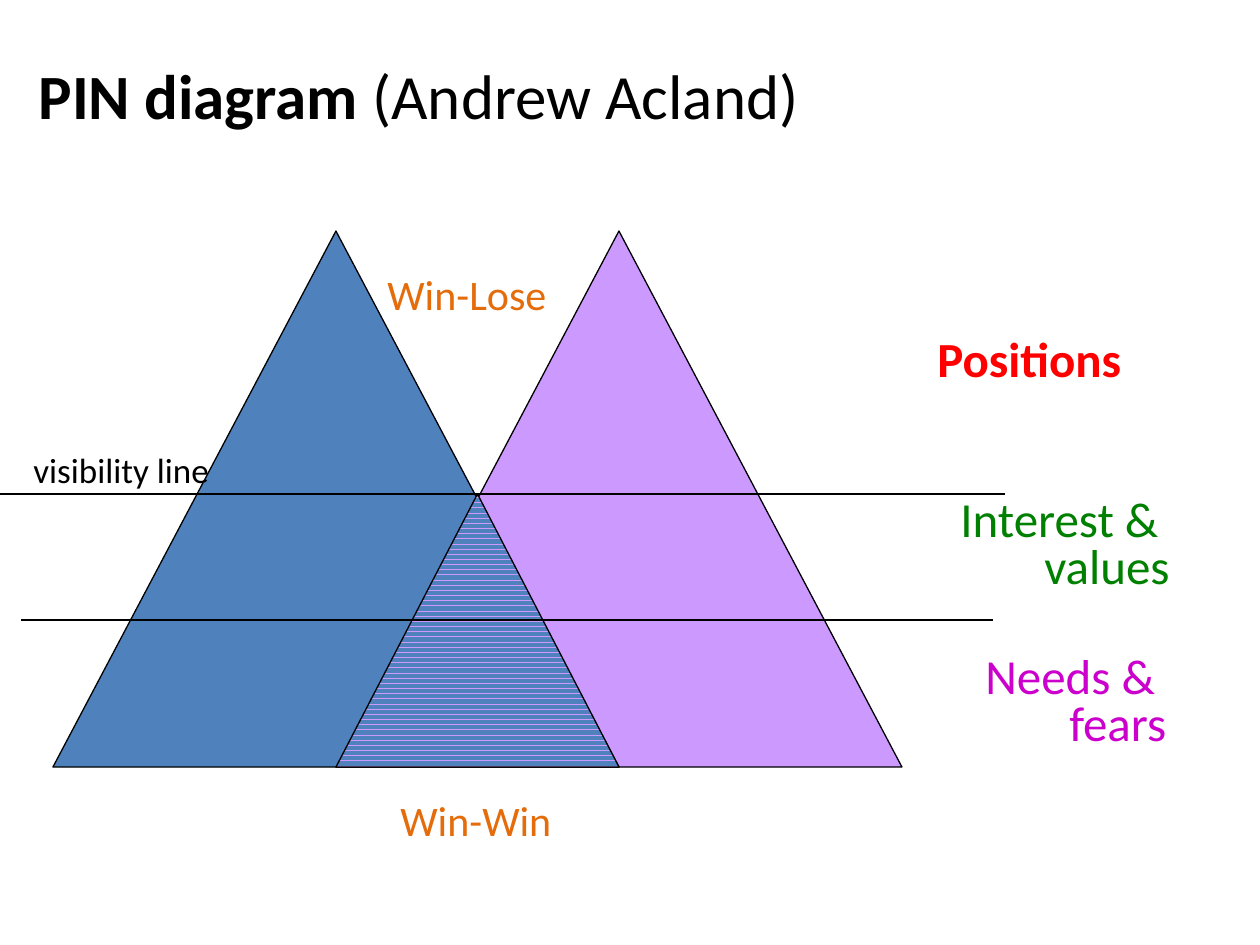
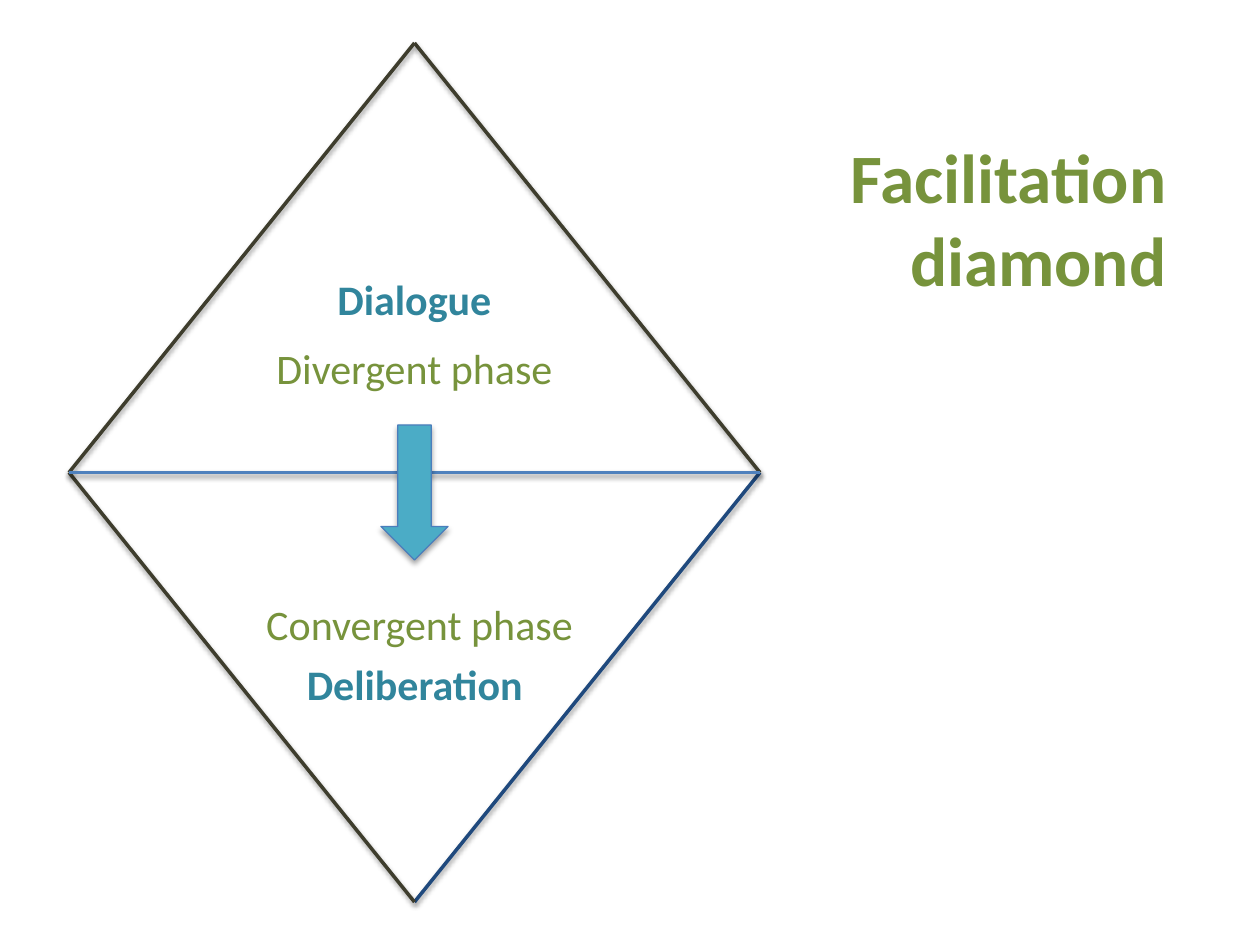
from collections import namedtuple

from lxml.etree import SubElement
from pptx import Presentation
from pptx.dml.color import RGBColor
from pptx.enum.dml import MSO_PATTERN
from pptx.enum.shapes import MSO_CONNECTOR, MSO_SHAPE
from pptx.enum.text import MSO_ANCHOR, PP_ALIGN
from pptx.oxml.ns import qn
from pptx.util import Emu, Pt

Box = namedtuple("Box", "x y w h")

EMU_PER_PX = 914400 / 126
FONT = "Calibri"
BLACK = "000000"
BLUE = "4F81BD"
LILAC = "CC99FF"
ORANGE = "E46C0A"
OLIVE = "77933C"
TEAL = "31859C"
BARK = "3E3D2D"
NAVY = "1F497D"
HANGING = 84


def px(length):
    return Emu(round(length * EMU_PER_PX))


def rgb(value):
    return RGBColor.from_string(value)


def style(paragraph, size, color, bold=False, align=PP_ALIGN.LEFT,
          spacing=None, before=None, margin=0, indent=0):
    font = paragraph.font
    font.name, font.size, font.bold = FONT, Pt(size), bold
    font.color.rgb = rgb(color)
    paragraph.alignment = align
    if spacing is not None:
        paragraph.line_spacing = spacing
    if before is not None:
        paragraph.space_before = Pt(before)
    properties = paragraph._p.get_or_add_pPr()
    properties.set("marL", str(px(margin)))
    properties.set("indent", str(px(indent)))


def add_effects(shape, opacity=None, distance=0):
    effects = SubElement(shape._element.spPr, qn("a:effectLst"))
    if opacity is None:
        return
    shadow = SubElement(effects, qn("a:outerShdw"), blurRad=str(Pt(3.1)),
                        dist=str(Pt(distance)), dir="5400000", rotWithShape="0")
    color = SubElement(shadow, qn("a:srgbClr"), val=BLACK)
    SubElement(color, qn("a:alpha"), val=str(opacity * 1000))


def add_line(slide, start, end, color=BLACK, width=0.75, **shadow):
    line = slide.shapes.add_connector(
        MSO_CONNECTOR.STRAIGHT, *map(px, start), *map(px, end))
    line.line.color.rgb = rgb(color)
    line.line.width = Pt(width)
    add_effects(line, **shadow)


def add_text(slide, box, text, size, color, wrap=True, **options):
    frame = slide.shapes.add_textbox(*map(px, box)).text_frame
    frame.word_wrap = wrap
    frame.text = text
    style(frame.paragraphs[0], size, color, **options)
    return frame


def add_title_slide(deck, box):
    slide = deck.slides.add_slide(deck.slide_layouts[5])
    title = slide.shapes.title
    title.left, title.top, title.width, title.height = map(px, box)
    title.text_frame.vertical_anchor = MSO_ANCHOR.MIDDLE
    return slide, title.text_frame.paragraphs[0]


def add_triangle(slide, box, color, stripes=None):
    triangle = slide.shapes.add_shape(
        MSO_SHAPE.ISOSCELES_TRIANGLE, *map(px, box))
    triangle.shadow.inherit = False
    if stripes:
        triangle.fill.patterned()
        triangle.fill.pattern = MSO_PATTERN.DARK_HORIZONTAL
        triangle.fill.fore_color.rgb = rgb(color)
        triangle.fill.back_color.rgb = rgb(stripes)
    else:
        triangle.fill.solid()
        triangle.fill.fore_color.rgb = rgb(color)
    triangle.line.color.rgb = rgb(BLACK)
    triangle.line.width = Pt(0.75)


def draw_pin_triangles(slide, box):
    half = box.w // 3
    visibility = box.y + 263
    needs = box.y + 389
    add_triangle(slide, Box(box.x + half, box.y, 2 * half, box.h), LILAC)
    add_triangle(slide, Box(box.x, box.y, 2 * half, box.h), BLUE)
    add_triangle(slide, Box(box.x + half, visibility, half,
                            box.y + box.h - visibility), BLUE, LILAC)
    for left, right, level in ((box.x, 1005, visibility),
                               (0, 973, visibility),
                               (21, 993, needs)):
        add_line(slide, (left, level), (right, level))

    add_text(slide, Box(box.x + 322, box.y + 31, 242, 63), "Win-Lose",
             24, ORANGE, before=12)
    add_text(slide, Box(box.x + 335, box.y + box.h + 31, 228, 59), "Win-Win",
             24, ORANGE, spacing=0.8, before=4.8,
             margin=HANGING, indent=-HANGING)
    add_text(slide, Box(box.x - 32, visibility - 52, 222, 55),
             "visibility line", 20, BLACK)


def draw_level_names(slide, box):
    levels = (("Positions", "FF0000", True, Box(0, 0, 258, 59)),
              ("Interest & values", "008000", False, Box(23, 160, 268, 126)),
              ("Needs & fears", "CC00CC", False, Box(48, 317, 272, 116)))
    for name, color, bold, place in levels:
        add_text(slide, place._replace(x=box.x + place.x, y=box.y + place.y),
                 name, 28, color, bold=bold, spacing=0.8, before=5.6,
                 margin=HANGING, indent=-HANGING)


def build_pin_slide(deck):
    slide, title = add_title_slide(deck, Box(0, 0, 1260, 189))
    title.add_run().text = "PIN diagram "
    author = title.add_run()
    author.text = "(Andrew Acland)"
    author.font.bold = False
    style(title, 36, BLACK, bold=True, margin=26)
    draw_pin_triangles(slide, Box(53, 231, 849, 536))
    draw_level_names(slide, Box(925, 334, 320, 433))


def draw_diamond(slide, box):
    center, middle = box.x + box.w / 2, box.y + box.h / 2
    top, bottom = (center, box.y), (center, box.y + box.h)
    left, right = (box.x, middle), (box.x + box.w, middle)

    diamond = slide.shapes.add_shape(MSO_SHAPE.DIAMOND, *map(px, box))
    diamond.shadow.inherit = False
    diamond.fill.background()
    diamond.line.fill.background()
    frame = diamond.text_frame
    frame.word_wrap = True
    frame.vertical_anchor = MSO_ANCHOR.TOP
    frame.text = "Dialogue\nDivergent phase"
    dialogue, divergent = frame.paragraphs
    phase = dict(align=PP_ALIGN.CENTER, spacing=1.2)
    style(dialogue, 24, TEAL, bold=True, before=4.8, **phase)
    style(divergent, 24, OLIVE, before=4.8, **phase)

    for start, end, color in ((top, right, BARK), (right, bottom, NAVY),
                              (top, left, BARK), (left, bottom, BARK),
                              (left, right, BLUE)):
        add_line(slide, start, end, color, 2, opacity=38, distance=1.6)

    closing = add_text(slide, Box(box.x + 183, box.y + 539, 335, 135),
                       "Convergent phase", 24, OLIVE, wrap=False, **phase)
    deliberation = closing.add_paragraph()
    deliberation.text = "Deliberation "
    style(deliberation, 24, TEAL, bold=True, **phase)

    arrow = slide.shapes.add_shape(
        MSO_SHAPE.DOWN_ARROW,
        *map(px, Box(center - 33.5, box.y + 382, 67, 135)))
    arrow.fill.solid()
    arrow.fill.fore_color.rgb = rgb("4BACC6")
    arrow.line.color.rgb = rgb("4B7EBC")
    arrow.line.width = Pt(0.75)
    add_effects(arrow, opacity=35, distance=1.8)


def build_diamond_slide(deck):
    slide, title = add_title_slide(deck, Box(728, 127, 451, 180))
    title.add_run().text = "Facilitation"
    title.add_line_break()
    title.add_run().text = "diamond"
    style(title, 39.6, OLIVE, bold=True, align=PP_ALIGN.RIGHT)
    draw_diamond(slide, Box(69, 43, 691, 859))


def main():
    deck = Presentation()
    deck.slide_width, deck.slide_height = px(1260), px(945)
    build_pin_slide(deck)
    build_diamond_slide(deck)
    deck.save("out.pptx")


if __name__ == "__main__":
    main()
